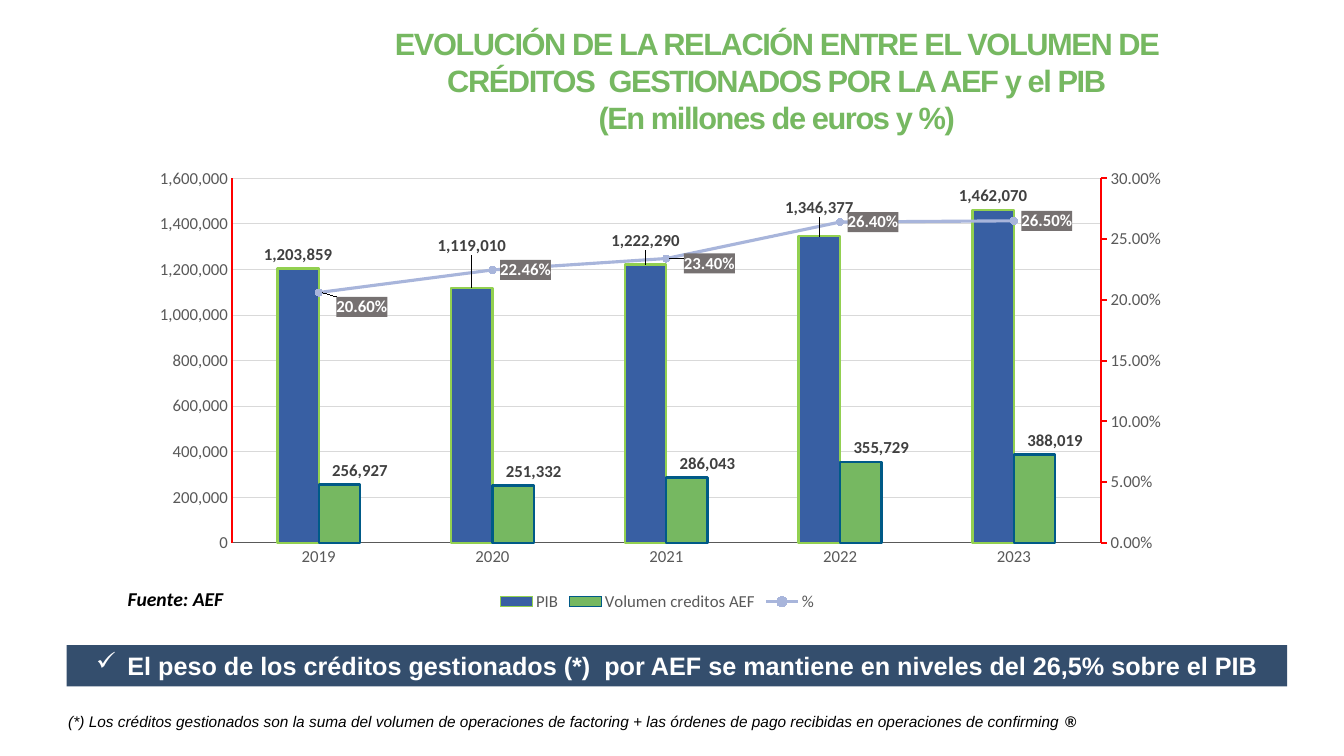
"""Build the slide comparing AEF credit volume with GDP."""
from copy import deepcopy
from dataclasses import dataclass, field

from lxml import etree
from pptx import Presentation
from pptx import util as u
from pptx.chart.data import CategoryChartData
from pptx.dml.color import RGBColor
from pptx.enum import chart as ch
from pptx.enum import shapes, text
from pptx.oxml import parse_xml
from pptx.oxml.ns import nsdecls, qn

COLORS = {
    "green": "76B861", "blue": "385FA3", "lime": "92D050", "teal": "005A87",
    "lilac": "A8B5DB", "tag": "767171", "navy": "344E6D", "white": "FFFFFF",
    "black": "000000", "label": "404040", "axis": "595959", "grid": "D9D9D9",
    "red": "FF0000",
}
YEARS = ("2019", "2020", "2021", "2022", "2023")


@dataclass
class Series:
    """A chart series, its look and the offsets of its moved labels."""
    name: str
    values: tuple[float, ...]
    fmt: str
    fill: str
    line: str
    width: float
    label: str
    position: ch.XL_LABEL_POSITION
    moved: dict[int, tuple[float, float]] = field(default_factory=dict)


@dataclass
class Run:
    """A run of formatted text."""
    text: str
    font: str
    size: float
    color: str
    bold: bool = False
    italic: bool = False


@dataclass
class Box:
    """Position and size in centimetres."""
    x: float
    y: float
    w: float
    h: float

    def lengths(self) -> tuple[u.Length, ...]:
        """Return the box as slide lengths."""
        return tuple(u.Cm(v) for v in (self.x, self.y, self.w, self.h))


OUT, RIGHT = ch.XL_LABEL_POSITION.OUTSIDE_END, ch.XL_LABEL_POSITION.RIGHT
SERIES = (
    Series("PIB", (1203859, 1119010, 1222290, 1346377, 1462070), "#,##0",
           "blue", "lime", 1.75, "label", OUT,
           {1: (0, -0.06), 2: (0, -0.02), 3: (0, -0.03)}),
    Series("Volumen creditos AEF", (256927, 251332, 286043, 355729, 388019), "#,##0",
           "green", "teal", 1.75, "label", OUT, {i: (0.02, 0) for i in range(5)}),
    Series("%", (0.206, 0.2246, 0.234, 0.264, 0.265), "0.00%",
           "lilac", "lilac", 2.25, "white", RIGHT, {0: (0.01, 0.03), 2: (0.01, 0.01)}),
)


def rgb(name: str) -> RGBColor:
    """Look up a colour."""
    return RGBColor.from_string(COLORS[name])


def style_font(font, size: float, color: str, bold: bool = False,
               name: str = "Calibri", italic: bool = False) -> None:
    """Format a font."""
    font.name, font.size, font.bold, font.italic = name, u.Pt(size), bold, italic
    font.color.rgb = rgb(color)


def style_line(line, color: str, width: float) -> None:
    """Format an outline."""
    line.color.rgb, line.width = rgb(color), u.Pt(width)


def add_run(p, run: Run):
    """Append a formatted run to a paragraph."""
    r = p.add_run()
    r.text = run.text
    style_font(r.font, run.size, run.color, run.bold, run.font, run.italic)
    return r


def add_text(slide, box: Box, runs: tuple[Run, ...], wrap: bool = True) -> None:
    """Add a text box."""
    tf = slide.shapes.add_textbox(*box.lengths()).text_frame
    tf.word_wrap = wrap
    for run in runs:
        add_run(tf.paragraphs[0], run)


def add_title(slide, box: Box, lines: tuple[str, ...]) -> None:
    """Place and fill the title placeholder."""
    sp = slide.shapes.title
    sp.left, sp.top, sp.width, sp.height = box.lengths()
    tf = sp.text_frame
    tf.word_wrap, tf.vertical_anchor = True, text.MSO_ANCHOR.MIDDLE
    p = tf.paragraphs[0]
    p.alignment = text.PP_ALIGN.CENTER
    for i, line in enumerate(lines):
        if i:
            p.add_line_break()
        r = add_run(p, Run(line, "Arial", 22, "green", bold=True))
        r.font._element.set("spc", "-100")


def add_banner(slide, box: Box, run: Run) -> None:
    """Add the filled bar with its check-marked message."""
    sp = slide.shapes.add_shape(shapes.MSO_SHAPE.RECTANGLE, *box.lengths())
    sp.shadow.inherit = False
    sp.fill.solid()
    sp.fill.fore_color.rgb = rgb("navy")
    sp.line.fill.background()
    tf = sp.text_frame
    tf.word_wrap = True
    p = tf.paragraphs[0]
    p.alignment = text.PP_ALIGN.CENTER
    pPr = p._p.get_or_add_pPr()
    pPr.set("marL", str(u.Cm(0.79)))
    pPr.set("indent", str(-u.Cm(0.79)))
    etree.SubElement(pPr, qn("a:buChar")).set("char", "✓")
    add_run(p, run)


def drop_children(parent, tag: str) -> None:
    """Remove every child with the given tag."""
    for child in parent.findall(qn(tag)):
        parent.remove(child)


def move_to_right_axis(area) -> None:
    """Turn the last bar series into a line on a second value axis."""
    bars = area.find(qn("c:barChart"))
    ser = bars.findall(qn("c:ser"))[-1]
    drop_children(ser, "c:invertIfNegative")
    line = parse_xml(
        f'<c:lineChart {nsdecls("c")}><c:grouping val="standard"/><c:varyColors val="0"/>'
        '<c:marker val="1"/><c:axId val="501"/><c:axId val="502"/></c:lineChart>')
    line.insert(2, ser)
    bars.addnext(line)
    hidden = parse_xml(
        f'<c:catAx {nsdecls("c")}><c:axId val="501"/><c:scaling/><c:delete val="1"/>'
        '<c:axPos val="b"/><c:crossAx val="502"/></c:catAx>')
    left = area.find(qn("c:valAx"))
    right = deepcopy(left)
    drop_children(right, "c:majorGridlines")
    changes = {"c:axId": "502", "c:crossAx": "501", "c:axPos": "r", "c:crosses": "max",
               "c:majorTickMark": "out", "c:majorUnit": "0.05"}
    for tag, val in changes.items():
        right.find(qn(tag)).set("val", val)
    right.find(qn("c:scaling")).find(qn("c:max")).set("val", "0.3")
    right.find(qn("c:numFmt")).set("formatCode", "0.00%")
    left.addnext(right)
    right.addnext(hidden)


def style_series(ser, spec: Series) -> None:
    """Format a series and its labels."""
    style_line(ser.format.line, spec.line, spec.width)
    labels = ser.data_labels
    labels.show_value = True
    labels.number_format, labels.number_format_is_linked = spec.fmt, False
    labels.position = spec.position
    style_font(labels.font, 12, spec.label, True)
    root, mark = labels._element, ser.format
    if spec.position == RIGHT:
        ser.smooth = False
        ser.marker.style, ser.marker.size = ch.XL_MARKER_STYLE.CIRCLE, 5
        mark = ser.marker.format
        style_line(mark.line, spec.line, 2.25)
        root.find(qn("c:txPr")).addprevious(parse_xml(
            f'<c:spPr {nsdecls("c", "a")}><a:solidFill>'
            f'<a:srgbClr val="{COLORS["tag"]}"/></a:solidFill></c:spPr>'))
    mark.fill.solid()
    mark.fill.fore_color.rgb = rgb(spec.fill)
    shared = [e for e in root if e.tag != qn("c:showLeaderLines")]
    for n, (idx, (dx, dy)) in enumerate(spec.moved.items()):
        point = parse_xml(
            f'<c:dLbl {nsdecls("c")}><c:idx val="{idx}"/><c:layout><c:manualLayout>'
            f'<c:x val="{dx}"/><c:y val="{dy}"/></c:manualLayout></c:layout></c:dLbl>')
        point.extend([deepcopy(e) for e in shared])
        root.insert(n, point)


def add_gdp_chart(slide, box: Box) -> None:
    """Add the combined column and line chart."""
    data = CategoryChartData()
    data.categories = YEARS
    for spec in SERIES:
        data.add_series(spec.name, spec.values, spec.fmt)
    chart = slide.shapes.add_chart(
        ch.XL_CHART_TYPE.COLUMN_CLUSTERED, *box.lengths(), data).chart
    style_font(chart.font, 10, "black")
    chart.has_title, chart.has_legend = False, True
    chart.legend.position = ch.XL_LEGEND_POSITION.BOTTOM
    chart.legend.include_in_layout = False
    style_font(chart.legend.font, 12, "axis")
    cat, val = chart.category_axis, chart.value_axis
    for axis, color, width in ((cat, "axis", 0.75), (val, "red", 1.5)):
        axis.major_tick_mark = ch.XL_TICK_MARK.NONE
        style_font(axis.tick_labels.font, 12, "axis")
        style_line(axis.format.line, color, width)
    style_line(val.major_gridlines.format.line, "grid", 0.75)
    val.minimum_scale, val.maximum_scale, val.major_unit = 0, 1600000, 200000
    val.tick_labels.number_format = "#,##0"
    val.tick_labels.number_format_is_linked = False
    bars = chart.plots[0]
    bars.gap_width, bars.overlap, bars.vary_by_categories = 219, 0, False
    area = cat._element.getparent()
    move_to_right_axis(area)
    drop_children(area, "c:layout")
    sizes = "".join(f'<c:{k} val="{v}"/>' for k, v in
                    (("x", 0.084), ("y", 0.088), ("w", 0.85), ("h", 0.76)))
    area.insert(0, parse_xml(
        f'<c:layout {nsdecls("c")}><c:manualLayout><c:layoutTarget val="inner"/>'
        f'<c:xMode val="edge"/><c:yMode val="edge"/>{sizes}</c:manualLayout></c:layout>'))
    for ser, spec in zip([s for plot in chart.plots for s in plot.series], SERIES):
        style_series(ser, spec)


def main() -> None:
    """Build and save the slide."""
    prs = Presentation()
    prs.slide_width, prs.slide_height = u.Cm(33.87), u.Cm(19.05)
    slide = prs.slides.add_slide(prs.slide_layouts[5])
    add_title(slide, Box(8.03, 0.43, 23.09, 3.18), (
        "EVOLUCIÓN DE LA RELACIÓN ENTRE EL VOLUMEN DE CRÉDITOS  GESTIONADOS POR LA AEF y el PIB",
        "(En millones de euros y %)"))
    add_gdp_chart(slide, Box(3.68, 3.43, 25.76, 12.09))
    add_banner(slide, Box(1.68, 16.26, 30.76, 1.04), Run(
        "El peso de los créditos gestionados (*)  por AEF se mantiene en niveles del 26,5% sobre el PIB",
        "Arial", 18, "white", bold=True))
    add_text(slide, Box(1.47, 17.83, 26.72, 0.74), (
        Run("(*) Los créditos gestionados son la suma del volumen de operaciones de factoring + "
            "las órdenes de pago recibidas en operaciones de confirming", "Arial", 11, "black", italic=True),
        Run(" ®", "Arial", 11, "black", bold=True)))
    add_text(slide, Box(2.97, 14.66, 2.95, 0.86),
             (Run("Fuente: AEF", "Calibri", 14, "black", True, True),), wrap=False)
    prs.save("out.pptx")


if __name__ == "__main__":
    main()
